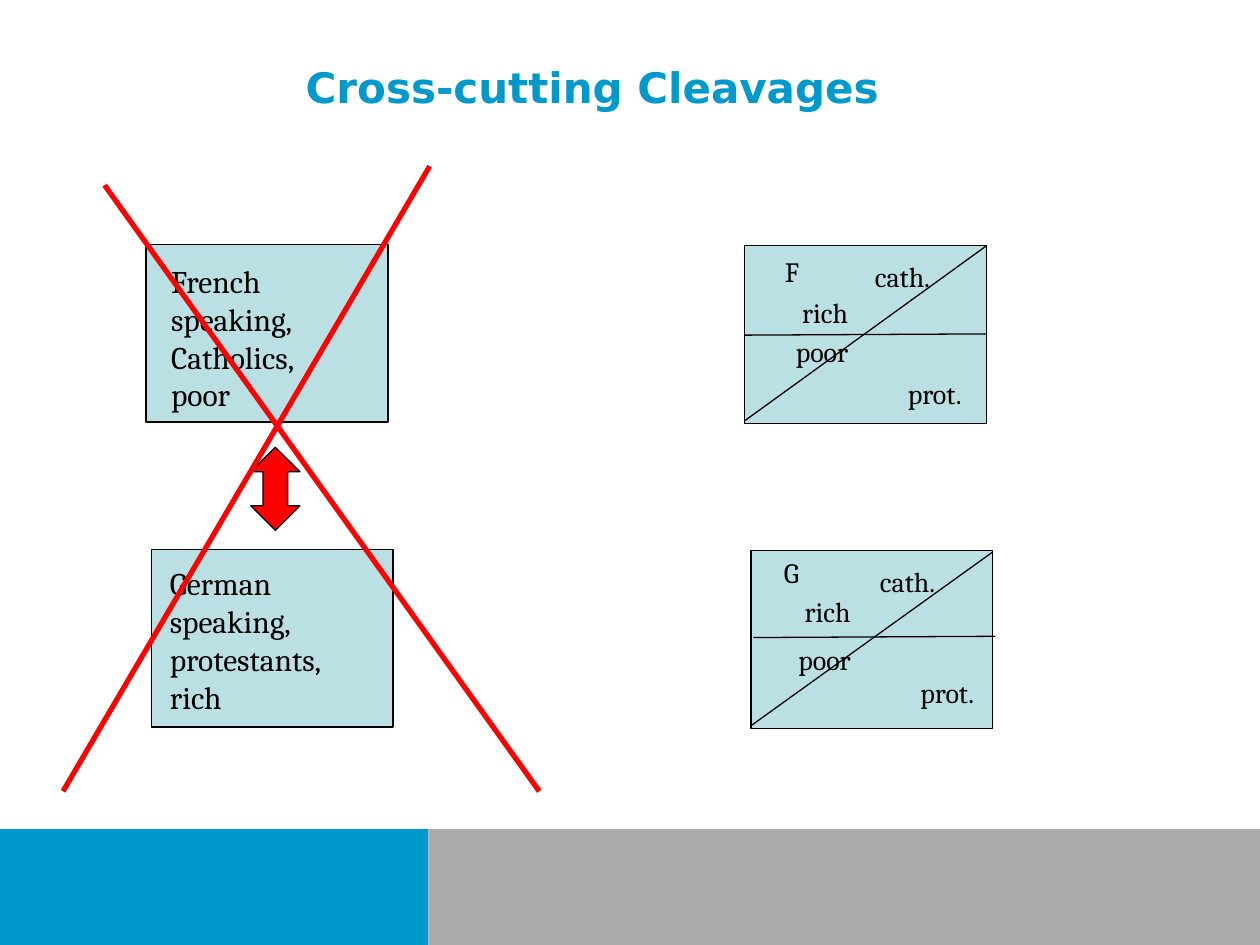
import pptx
import pptx.util
import pptx.dml.color
import pptx.enum.shapes
import pptx.enum.text
import pptx.oxml.ns
from lxml import etree

Inches = pptx.util.Inches
Pt = pptx.util.Pt
RGBColor = pptx.dml.color.RGBColor
MSO_SHAPE = pptx.enum.shapes.MSO_SHAPE
PP_ALIGN = pptx.enum.text.PP_ALIGN

BLUE = RGBColor(0x00, 0x99, 0xCC)
GRAY = RGBColor(0xAB, 0xAB, 0xAB)
PALE = RGBColor(0xBB, 0xE0, 0xE3)
RED = RGBColor(0xFF, 0x00, 0x00)
BLACK = RGBColor(0x00, 0x00, 0x00)


class SlideBuilder:
    title_font = "DejaVu Sans"
    body_font = "Cambria"
    thin = 0.75

    def __init__(self, s):
        self.s = s

    def format_text(self, tf, size, font, color, align, bold=False):
        for p in tf.paragraphs:
            p.alignment = align
            for r in p.runs:
                r.font.size = Pt(size)
                r.font.name = font
                r.font.color.rgb = color
                r.font.bold = bold

    def title(self, text, x, y, w, h):
        sp = self.s.shapes.title
        sp.left, sp.top, sp.width, sp.height = map(Inches, (x, y, w, h))
        tf = sp.text_frame
        tf.text = text
        tf.auto_size = pptx.enum.text.MSO_AUTO_SIZE.NONE
        tf.vertical_anchor = pptx.enum.text.MSO_ANCHOR.TOP
        self.format_text(tf, 24, self.title_font, BLUE, PP_ALIGN.CENTER, True)

    def shape(self, x, y, w, h, fill, line=None, kind=MSO_SHAPE.RECTANGLE):
        sp = self.s.shapes.add_shape(kind, Inches(x), Inches(y), Inches(w), Inches(h))
        sp.shadow.inherit = False
        sp.fill.solid()
        sp.fill.fore_color.rgb = fill
        if line is None:
            sp.line.fill.background()
        else:
            sp.line.color.rgb = line
            sp.line.width = Pt(self.thin)
        return sp

    def text(self, text, x, y, w, h, size=16, align=PP_ALIGN.RIGHT):
        sp = self.s.shapes.add_textbox(Inches(x), Inches(y), Inches(w), Inches(h))
        tf = sp.text_frame
        tf.word_wrap = True
        tf.auto_size = pptx.enum.text.MSO_AUTO_SIZE.SHAPE_TO_FIT_TEXT
        tf.text = text
        self.format_text(tf, size, self.body_font, BLACK, align)

    def line(self, x1, y1, x2, y2, color=BLACK, width=thin):
        cn = self.s.shapes.add_connector(
            pptx.enum.shapes.MSO_CONNECTOR.STRAIGHT,
            Inches(x1), Inches(y1), Inches(x2), Inches(y2))
        cn.line.color.rgb = color
        cn.line.width = Pt(width)
        etree.SubElement(cn._element.spPr, pptx.oxml.ns.qn("a:effectLst"))

    def group_box(self, x, y, text, text_x, text_y, text_w, text_h):
        self.shape(x, y, 1.92, 1.41, PALE, BLACK)
        self.text(text, text_x, text_y, text_w, text_h, 18, PP_ALIGN.LEFT)

    def divided_box(self, x, y, labels, divider, diagonal):
        self.shape(x, y, 1.92, 1.41, PALE, BLACK)
        for label, label_x, label_y, label_w in labels:
            self.text(label, label_x, label_y, label_w, 0.37)
        for x1, y1, rise in (divider, diagonal):
            self.line(x1, y1, x1 + 1.92, y1 - rise)


def main():
    prs = pptx.Presentation()
    prs.slide_width, prs.slide_height = Inches(10), Inches(7.5)
    s = prs.slides.add_slide(prs.slide_layouts[5])
    b = SlideBuilder(s)

    b.shape(0, 6.58, 3.4, 0.92, BLUE)
    b.shape(3.4, 6.58, 6.6, 0.92, GRAY)
    b.title("Cross-cutting Cleavages", 0.2, 0.44, 9, 1.25)

    b.group_box(1.16, 1.94, "French speaking,\nCatholics,\npoor", 1.26, 2.03, 1.7, 1.31)
    b.group_box(1.2, 4.36, "German speaking, protestants, rich", 1.25, 4.43, 1.83, 1.01)

    b.divided_box(5.91, 1.95, [
        ("F", 6.01, 1.97, 0.43),
        ("rich", 5.95, 2.3, 0.88),
        ("poor", 5.95, 2.61, 0.88),
        ("cath.", 6.61, 2.01, 0.87),
        ("prot.", 6.94, 2.94, 0.79),
    ], (5.91, 2.66, 0.01), (5.91, 3.34, 1.39))
    b.divided_box(5.96, 4.37, [
        ("G", 6.01, 4.36, 0.43),
        ("rich", 5.97, 4.67, 0.88),
        ("poor", 5.97, 5.05, 0.88),
        ("cath.", 6.65, 4.43, 0.87),
        ("prot.", 7.04, 5.31, 0.79),
    ], (5.98, 5.06, 0.01), (5.96, 5.76, 1.38))

    arrow = b.shape(1.99, 3.55, 0.39, 0.66, RED, BLACK, MSO_SHAPE.UP_DOWN_ARROW)
    arrow.adjustments[0] = 0.5
    arrow.adjustments[1] = 0.5
    b.line(0.5, 6.28, 3.41, 1.32, RED, 3)
    b.line(0.83, 1.47, 4.28, 6.28, RED, 3)

    prs.save("out.pptx")


if __name__ == "__main__":
    main()
